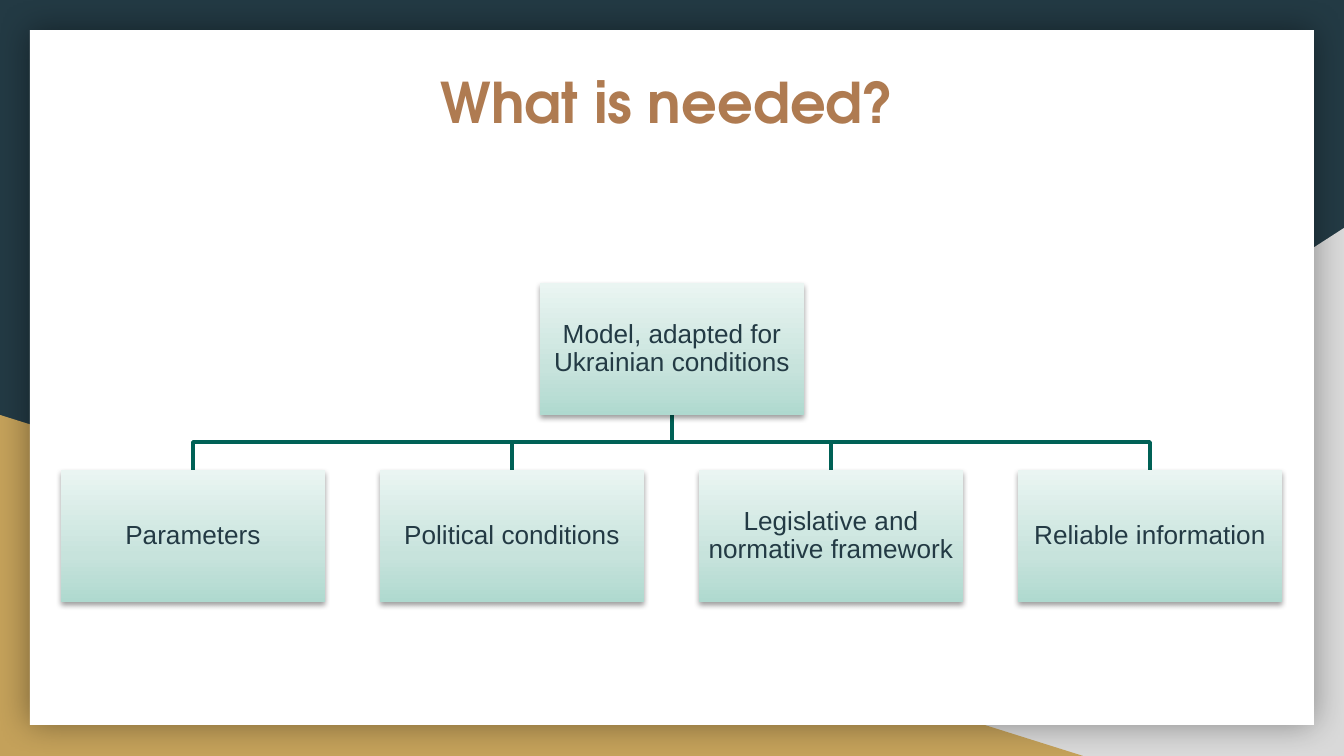
"""Build a slide with a requirements tree: one model and four conditions."""
from pptx import Presentation
from pptx.dml.color import RGBColor
from pptx.enum.shapes import MSO_SHAPE as SHAPE
from pptx.enum.text import MSO_ANCHOR as ANCHOR, PP_ALIGN as ALIGN
from pptx.oxml import parse_xml
from pptx.oxml.ns import nsdecls, qn
from pptx.util import Emu, Pt

PX = 914400 / 134.4
NAVY = RGBColor(0x23, 0x3A, 0x44)
GREY = RGBColor(0xD9, 0xD9, 0xD9)
GOLD = RGBColor(0xC4, 0xA1, 0x5A)
WHITE = RGBColor(0xFF, 0xFF, 0xFF)
BROWN = RGBColor(0xAF, 0x7B, 0x51)
GREEN = RGBColor(0x00, 0x61, 0x56)
MINTS = [
    (0, RGBColor(0xAF, 0xD9, 0xCF)),
    (35, RGBColor(0xC7, 0xE3, 0xDC)),
    (100, RGBColor(0xEA, 0xF5, 0xF2)),
]


def add_plain(kind, x, y, w, h, color=None, shadow=None):
    sp = slide.shapes.add_shape(kind, *[Emu(round(v * PX)) for v in (x, y, w, h)])
    sp.line.fill.background()
    sp.shadow.inherit = False
    if color is not None:
        sp.fill.solid()
        sp.fill.fore_color.rgb = color
    if shadow:
        alpha, blur, dist, angle = shadow
        sp._element.spPr.find(qn("a:effectLst")).append(parse_xml(
            f'<a:outerShdw {nsdecls("a")} blurRad="{Pt(blur)}" dist="{Pt(dist)}" '
            f'dir="{angle * 60000}" algn="ctr" rotWithShape="0"><a:srgbClr val="000000">'
            f'<a:alpha val="{alpha * 1000}"/></a:srgbClr></a:outerShdw>'))
    return sp


def set_text(sp, text, size, font, color, inset, bold=False):
    tf = sp.text_frame
    tf.word_wrap = True
    tf.margin_left = tf.margin_right = tf.margin_top = tf.margin_bottom = Emu(round(inset * PX))
    p = tf.paragraphs[0]
    p.text = text
    p.alignment = ALIGN.CENTER
    r = p.runs[0]
    r.font.size = Pt(size)
    r.font.name = font
    r.font.bold = bold
    r.font.color.rgb = color
    return tf


prs = Presentation()
prs.slide_width, prs.slide_height = Emu(round(1344 * PX)), Emu(round(756 * PX))
slide = prs.slides.add_slide(prs.slide_layouts[6])
slide.background.fill.solid()
slide.background.fill.fore_color.rgb = NAVY

grey_corner = add_plain(SHAPE.RIGHT_TRIANGLE, 527, 228, 817, 528, GREY)
grey_corner._element.spPr.find(qn("a:xfrm")).set("flipH", "1")
add_plain(SHAPE.RIGHT_TRIANGLE, 0, 415, 1083, 341, GOLD)
add_plain(SHAPE.RECTANGLE, 30, 30, 1284, 695, WHITE, (40, 18, 0, 0))

title = slide.shapes.add_textbox(*[Emu(round(v * PX)) for v in (44, 55, 1247, 140)])
set_text(title, "What is needed?", 30, "TeX Gyre Adventor", BROWN, 13, True)

BOX_W, BOX_H = 264, 132
ROOT_X, ROOT_Y = 540, 283
LEAF_X, LEAF_Y, LEAF_STEP = 61, 470, 319
BUS_Y = 442
leaves = ["Parameters", "Political conditions",
          "Legislative and normative framework", "Reliable information"]
boxes = [("Model, adapted for Ukrainian conditions", ROOT_X, ROOT_Y)]
boxes += [(text, LEAF_X + i * LEAF_STEP, LEAF_Y) for i, text in enumerate(leaves)]

root_mid = ROOT_X + BOX_W // 2
for _, x, y in boxes[1:]:
    leaf_mid = x + BOX_W // 2
    branch = slide.shapes.build_freeform(root_mid, ROOT_Y + BOX_H, scale=PX)
    branch.add_line_segments([(root_mid, BUS_Y), (leaf_mid, BUS_Y), (leaf_mid, y)], close=False)
    sp = branch.convert_to_shape()
    sp.fill.background()
    sp.line.color.rgb = GREEN
    sp.line.width = Pt(2)
    sp.shadow.inherit = False

stops = "".join(f'<a:gs pos="{pos * 1000}"><a:srgbClr val="{color}"/></a:gs>'
                for pos, color in MINTS)
for text, x, y in boxes:
    sp = add_plain(SHAPE.RECTANGLE, x, y, BOX_W, BOX_H, shadow=(38, 3.1, 1.6, 90))
    sp._element.spPr.find(qn("a:ln")).addprevious(parse_xml(
        f'<a:gradFill {nsdecls("a")} rotWithShape="1"><a:gsLst>{stops}</a:gsLst>'
        f'<a:lin ang="{270 * 60000}" scaled="0"/></a:gradFill>'))
    tf = set_text(sp, text, 14, "Arial", NAVY, 1)
    tf.vertical_anchor = ANCHOR.MIDDLE
    tf.paragraphs[0].line_spacing = 0.9

prs.save("out.pptx")
